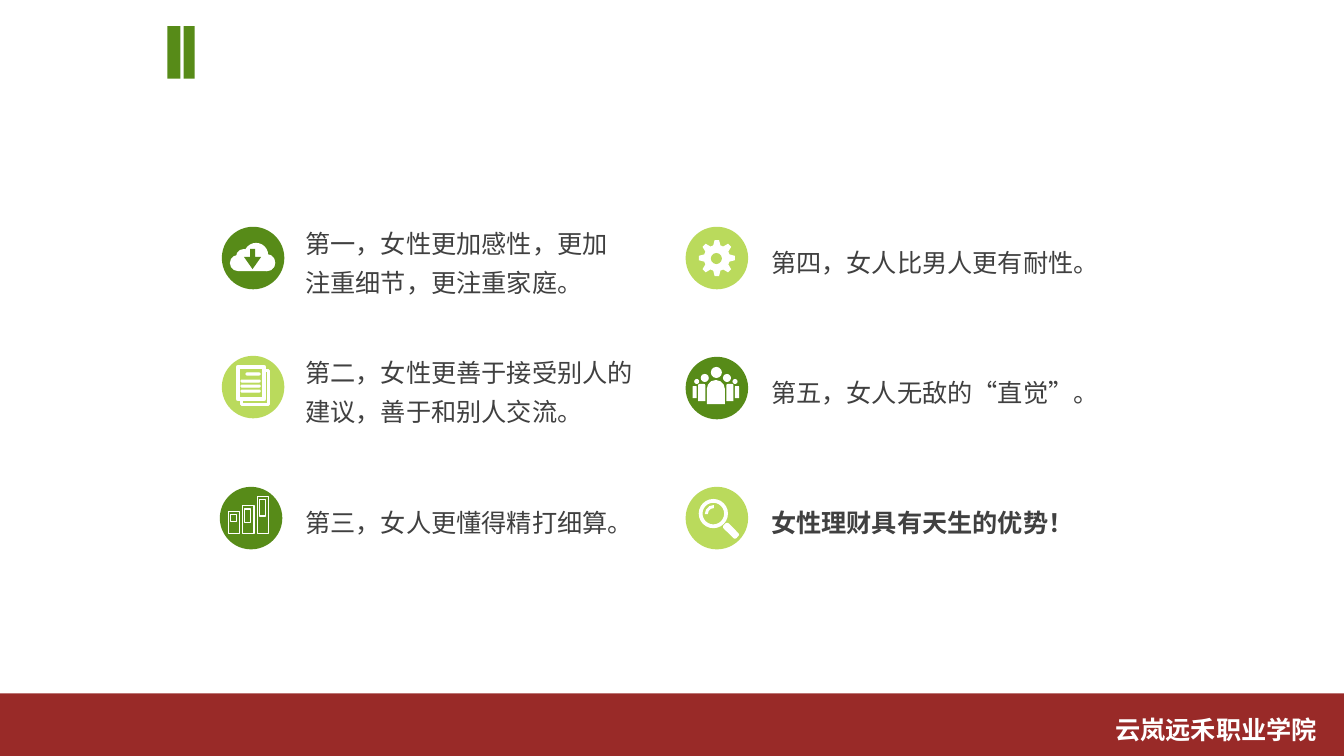
import math

import pptx
import pptx.dml.color
import pptx.enum.shapes
import pptx.enum.text
import pptx.oxml
import pptx.oxml.ns
import pptx.util

Inches = pptx.util.Inches
RGBColor = pptx.dml.color.RGBColor
Shape = pptx.enum.shapes.MSO_SHAPE
Align = pptx.enum.text.PP_ALIGN
Anchor = pptx.enum.text.MSO_ANCHOR

DARK_GREEN = RGBColor(0x57, 0x8B, 0x18)
LIGHT_GREEN = RGBColor(0xBA, 0xDA, 0x5C)
RED = RGBColor(0x99, 0x2A, 0x28)
GREY = RGBColor(0x40, 0x40, 0x40)
WHITE = RGBColor(0xFF, 0xFF, 0xFF)
FONT = "Noto Sans CJK SC"

presentation = pptx.Presentation()
presentation.slide_width = Inches(13.33)
presentation.slide_height = Inches(7.5)
slide = presentation.slides.add_slide(presentation.slide_layouts[6])


def add_text(text, left, top, width, height, color=GREY, bold=False,
             align=Align.LEFT, anchor=Anchor.MIDDLE, spacing=1.3):
    box = slide.shapes.add_textbox(Inches(left), Inches(top), Inches(width), Inches(height))
    frame = box.text_frame
    frame.word_wrap = True
    frame.auto_size = pptx.enum.text.MSO_AUTO_SIZE.SHAPE_TO_FIT_TEXT
    frame.vertical_anchor = anchor
    paragraph = frame.paragraphs[0]
    paragraph.alignment = align
    paragraph.line_spacing = spacing
    run = paragraph.add_run()
    run.text = text
    run.font.size = pptx.util.Pt(18)
    run.font.bold = bold
    run.font.color.rgb = color
    run.font.name = FONT
    east_asian = pptx.oxml.parse_xml(
        f'<a:ea {pptx.oxml.ns.nsdecls("a")} typeface="{FONT}"/>')
    run.font._element.append(east_asian)


def add_shape(kind, left, top, width, height, fill=WHITE, line=0, adjust=(), rotation=0):
    """Add a preset shape; line is the width in points of a white outline."""
    shape = slide.shapes.add_shape(
        kind, Inches(left), Inches(top), Inches(width), Inches(height))
    shape.shadow.inherit = False
    shape.fill.solid()
    shape.fill.fore_color.rgb = fill
    if line:
        shape.line.color.rgb = WHITE
        shape.line.width = pptx.util.Pt(line)
    else:
        shape.line.fill.background()
    for index, value in enumerate(adjust):
        shape.adjustments[index] = value
    shape.rotation = rotation


# Footer band
add_shape(Shape.RECTANGLE, 0, 6.88, 13.33, 0.63, RED)
add_text("云岚远禾职业学院", 8.43, 7.04, 4.73, 0.71, color=WHITE, bold=True,
         align=Align.RIGHT, anchor=Anchor.TOP, spacing=1.0)

# Title marker
for left, width in ((1.66, 0.13), (1.82, 0.11)):
    add_shape(Shape.RECTANGLE, left, 0.26, width, 0.52, DARK_GREEN)

# Icon discs
for left, top, color in (
    (2.2, 2.25, DARK_GREEN), (2.2, 3.53, LIGHT_GREEN), (2.18, 4.83, DARK_GREEN),
    (6.8, 2.25, LIGHT_GREEN), (6.8, 3.54, DARK_GREEN), (6.8, 4.83, LIGHT_GREEN),
):
    add_shape(Shape.OVAL, left, top, 0.62, 0.62, color)

# Points
for text, left, top, width, height, bold in (
    ("第一，女性更加感性，更加注重细节，更注重家庭。", 2.93, 2.12, 3.44, 0.89, False),
    ("第二，女性更善于接受别人的建议，善于和别人交流。", 2.93, 3.4, 3.59, 0.89, False),
    ("第三，女人更懂得精打细算。", 2.93, 4.89, 3.54, 0.49, False),
    ("第四，女人比男人更有耐性。", 7.55, 2.31, 3.6, 0.49, False),
    ("第五，女人无敌的“直觉”。", 7.55, 3.6, 3.6, 0.49, False),
    ("女性理财具有天生的优势！", 7.55, 4.89, 3.6, 0.49, True),
):
    add_text(text, left, top, width, height, bold=bold)

# Cloud with download arrow
for left, top, size in ((2.34, 2.47, 0.16), (2.42, 2.41, 0.24), (2.56, 2.52, 0.17)):
    add_shape(Shape.OVAL, left, top, size, size)
add_shape(Shape.ROUNDED_RECTANGLE, 2.28, 2.53, 0.45, 0.16, adjust=[0.5])
add_shape(Shape.DOWN_ARROW, 2.42, 2.47, 0.17, 0.2, DARK_GREEN, adjust=[0.29, 0.71])

# Stacked documents
add_shape(Shape.RECTANGLE, 2.4, 3.68, 0.26, 0.33, LIGHT_GREEN, line=2.2)
add_shape(Shape.RECTANGLE, 2.36, 3.64, 0.26, 0.32, LIGHT_GREEN, line=2.9)
for left, top, width in ((2.44, 3.7, 0.14), (2.39, 3.77, 0.19),
                         (2.39, 3.82, 0.19), (2.39, 3.87, 0.19)):
    add_shape(Shape.ROUNDED_RECTANGLE, left, top, width, 0.02, line=0.75, adjust=[0.5])

# Binders standing on one base line
for index, (top, label_height) in enumerate(((5.07, 0.07), (5.02, 0.13), (4.93, 0.16))):
    left = 2.27 + 0.14 * index
    add_shape(Shape.RECTANGLE, left, top, 0.11, 5.29 - top, DARK_GREEN, line=0.75)
    add_shape(Shape.RECTANGLE, left + 0.02, top + 0.03, 0.06, label_height,
              DARK_GREEN, line=0.75)

# Gear
gear_points = []
for tooth in range(8):
    for offset, radius in ((-16, 0.13), (-7, 0.18), (7, 0.18), (16, 0.13)):
        angle = math.radians(45 * tooth + offset)
        gear_points.append((Inches(7.11 + radius * math.sin(angle)),
                            Inches(2.56 - radius * math.cos(angle))))
builder = slide.shapes.build_freeform(*gear_points[0])
builder.add_line_segments(gear_points[1:], close=True)
gear = builder.convert_to_shape()
gear.shadow.inherit = False
gear.fill.solid()
gear.fill.fore_color.rgb = WHITE
gear.line.fill.background()
add_shape(Shape.OVAL, 7.05, 2.51, 0.11, 0.11, LIGHT_GREEN)

# Group of people, mirrored about the middle figure
middle = 7.1
for side in (-1, 1):
    for kind, offset, top, width, height in (
        (Shape.OVAL, 0.19, 3.76, 0.05, 0.05),
        (Shape.OVAL, 0.11, 3.71, 0.08, 0.08),
        (Shape.ROUND_2_SAME_RECTANGLE, 0.21, 3.83, 0.04, 0.12),
        (Shape.ROUND_2_SAME_RECTANGLE, 0.14, 3.81, 0.07, 0.17),
    ):
        add_shape(kind, middle + side * offset - width / 2, top, width, height)
add_shape(Shape.OVAL, middle - 0.05, 3.64, 0.11, 0.11)
add_shape(Shape.ROUND_2_SAME_RECTANGLE, middle - 0.09, 3.77, 0.18, 0.24, adjust=[0.5])

# Magnifying glass
add_shape(Shape.DONUT, 6.93, 4.95, 0.29, 0.29, adjust=[0.13])
add_shape(Shape.BLOCK_ARC, 6.99, 5.01, 0.18, 0.18, adjust=[108, 162, 0.17])
add_shape(Shape.ROUNDED_RECTANGLE, 7.16, 5.23, 0.18, 0.07, adjust=[0.3], rotation=45)

presentation.save("out.pptx")
